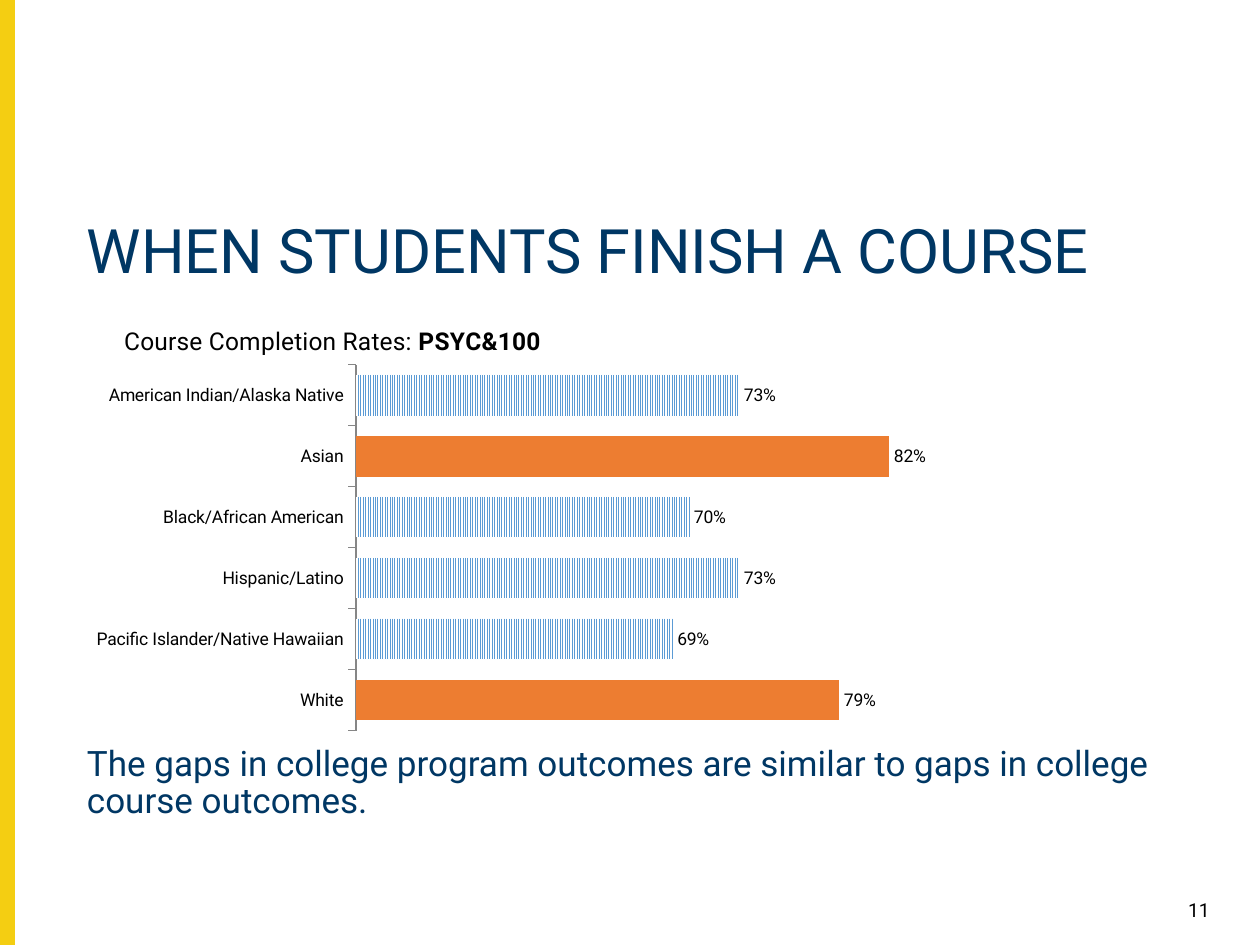
from dataclasses import dataclass

from lxml.etree import SubElement
from pptx import Presentation
from pptx.chart.data import CategoryChartData as ChartData
from pptx.dml.color import RGBColor as RGB
from pptx.enum.chart import XL_CHART_TYPE as Chart, XL_LABEL_POSITION as Spot
from pptx.enum.chart import XL_TICK_LABEL_POSITION as TickSpot, XL_TICK_MARK as Tick
from pptx.enum.dml import MSO_PATTERN as Pattern
from pptx.enum.shapes import MSO_SHAPE as Shape
from pptx.enum.text import MSO_ANCHOR as Anchor, MSO_AUTO_SIZE as Fit, PP_ALIGN as Align
from pptx.oxml import parse_xml
from pptx.oxml.ns import nsdecls, qn
from pptx.util import Inches, Pt


@dataclass(frozen=True)
class Theme:
    """Colours, font and type sizes of the slide."""
    font: str = "Roboto"
    navy: RGB = RGB(0x00, 0x37, 0x64)
    black: RGB = RGB(0, 0, 0)
    white: RGB = RGB(255, 255, 255)
    gold: RGB = RGB(0xF4, 0xCE, 0x12)
    blue: RGB = RGB(0x5B, 0x9B, 0xD5)
    orange: RGB = RGB(0xED, 0x7D, 0x31)
    gray: RGB = RGB(0x86, 0x86, 0x86)
    title: int = 35
    body: int = 20
    head: int = 14
    page: int = 11
    label: int = 10


THEME = Theme()
LEFT, WIDE = 0.59, 9.12
RATES = {
    "American Indian/Alaska Native": 0.73,
    "Asian": 0.82,
    "Black/African American": 0.70,
    "Hispanic/Latino": 0.73,
    "Pacific Islander/Native Hawaiian": 0.69,
    "White": 0.79,
}
HIGH = 0.75


def style(font, size, color, bold=False):
    """Apply the theme font with a size and a colour."""
    font.name, font.size, font.bold = THEME.font, Pt(size), bold
    font.color.rgb = color


def place(shape, left, top, width, height):
    """Move and size a shape in inches."""
    shape.left, shape.top = Inches(left), Inches(top)
    shape.width, shape.height = Inches(width), Inches(height)


def write(shape, text, size, color, align=Align.LEFT, anchor=Anchor.TOP, lead=0.9):
    """Fill a shape with one plain paragraph."""
    frame = shape.text_frame
    frame.text = text
    frame.word_wrap, frame.auto_size = True, Fit.NONE
    frame.vertical_anchor = anchor
    para = frame.paragraphs[0]
    para.alignment, para.line_spacing, para.space_before = align, lead, Pt(0)
    props = para._p.get_or_add_pPr()
    props.set("marL", "0")
    props.set("indent", "0")
    SubElement(props, qn("a:buNone"))
    style(para.runs[0].font, size, color)


def add_band(slide):
    """Draw the gold band along the left edge."""
    band = slide.shapes.add_shape(Shape.RECTANGLE, 0, 0, Inches(0.11), Inches(7.5))
    band.shadow.inherit = False
    band.fill.solid()
    band.fill.fore_color.rgb = band.line.color.rgb = THEME.gold
    band.line.width = Pt(1)


def set_layout(parent, index, inner=False, **sides):
    """Give a chart part a manual layout in fractions of the chart."""
    for old in parent.findall(qn("c:layout")):
        parent.remove(old)
    target = '<c:layoutTarget val="inner"/>' if inner else ""
    modes = "".join(f'<c:{key}Mode val="edge"/>' for key in "xy")
    values = "".join(f'<c:{key} val="{val}"/>' for key, val in sides.items())
    parent.insert(index, parse_xml(
        f'<c:layout {nsdecls("c")}><c:manualLayout>{target}{modes}{values}'
        "</c:manualLayout></c:layout>"))


def hatch(fill, kind):
    """Fill with a blue pattern on white."""
    fill.patterned()
    fill.pattern = kind
    fill.fore_color.rgb, fill.back_color.rgb = THEME.blue, THEME.white


def style_bars(plot):
    """Colour high rates orange, hatch the rest and label all bars."""
    plot.gap_width, plot.vary_by_categories = 50, False
    series = plot.series[0]
    hatch(series.format.fill, Pattern.DARK_UPWARD_DIAGONAL)
    for num, rate in enumerate(RATES.values()):
        fill = series.points[num].format.fill
        if rate > HIGH:
            fill.solid()
            fill.fore_color.rgb = THEME.orange
        else:
            hatch(fill, Pattern.NARROW_VERTICAL)
    plot.has_data_labels = True
    labels = plot.data_labels
    labels.show_value, labels.position = True, Spot.OUTSIDE_END
    labels.number_format, labels.number_format_is_linked = "0%", False
    style(labels.font, THEME.label, THEME.black)


def style_axes(chart):
    """List the groups from the top and hide the value axis."""
    groups, rates = chart.category_axis, chart.value_axis
    groups.reverse_order = True
    groups.major_tick_mark, groups.minor_tick_mark = Tick.OUTSIDE, Tick.NONE
    groups.tick_label_position = TickSpot.NEXT_TO_AXIS
    groups.format.line.color.rgb = THEME.gray
    style(groups.tick_labels.font, THEME.label, THEME.black)
    rates.minimum_scale, rates.maximum_scale = 0.5, 1
    rates.has_major_gridlines = rates.visible = False
    rates.tick_labels.number_format = "0%"
    rates.tick_labels.number_format_is_linked = False


def add_rates(slide):
    """Add the bar chart of completion rates."""
    data = ChartData(number_format="0%")
    data.categories = list(RATES)
    data.add_series("Series 1", list(RATES.values()))
    chart = slide.shapes.add_chart(
        Chart.BAR_CLUSTERED, Inches(LEFT), Inches(2.37), Inches(WIDE), Inches(3.5), data).chart
    chart.has_legend = False
    style(chart.font, THEME.label, THEME.black)
    style_axes(chart)
    style_bars(chart.plots[0])
    chart.has_title = True
    head = chart.chart_title
    para = head.text_frame.paragraphs[0]
    for text, bold in (("Course Completion Rates: ", False), ("PSYC&100", True)):
        run = para.add_run()
        run.text = text
        style(run.font, THEME.head, THEME.black, bold)
    set_layout(head._element, 1, x=0.04, y=0.05)
    area = chart._chartSpace.chart.plotArea
    set_layout(area, 0, inner=True, x=0.245, y=0.15, w=0.725, h=0.83)


def main():
    """Build and save the slide."""
    deck = Presentation()
    deck.slide_width, deck.slide_height = Inches(10), Inches(7.5)
    slide = deck.slides.add_slide(deck.slide_layouts[1])
    title, body = slide.placeholders
    add_band(slide)
    place(title, LEFT, 1.7, WIDE, 0.87)
    write(title, "WHEN STUDENTS FINISH A COURSE", THEME.title, THEME.navy)
    page = slide.shapes.add_textbox(Inches(9.19), Inches(7.09), Inches(0.51), Inches(0.26))
    write(page, "11", THEME.page, THEME.black, Align.RIGHT, Anchor.MIDDLE, 1.0)
    add_rates(slide)
    place(body, LEFT, 5.87, WIDE, 1.05)
    write(body, "The gaps in college program outcomes are similar to gaps in college "
          "course outcomes.", THEME.body, THEME.navy)
    deck.save("out.pptx")


if __name__ == "__main__":
    main()
